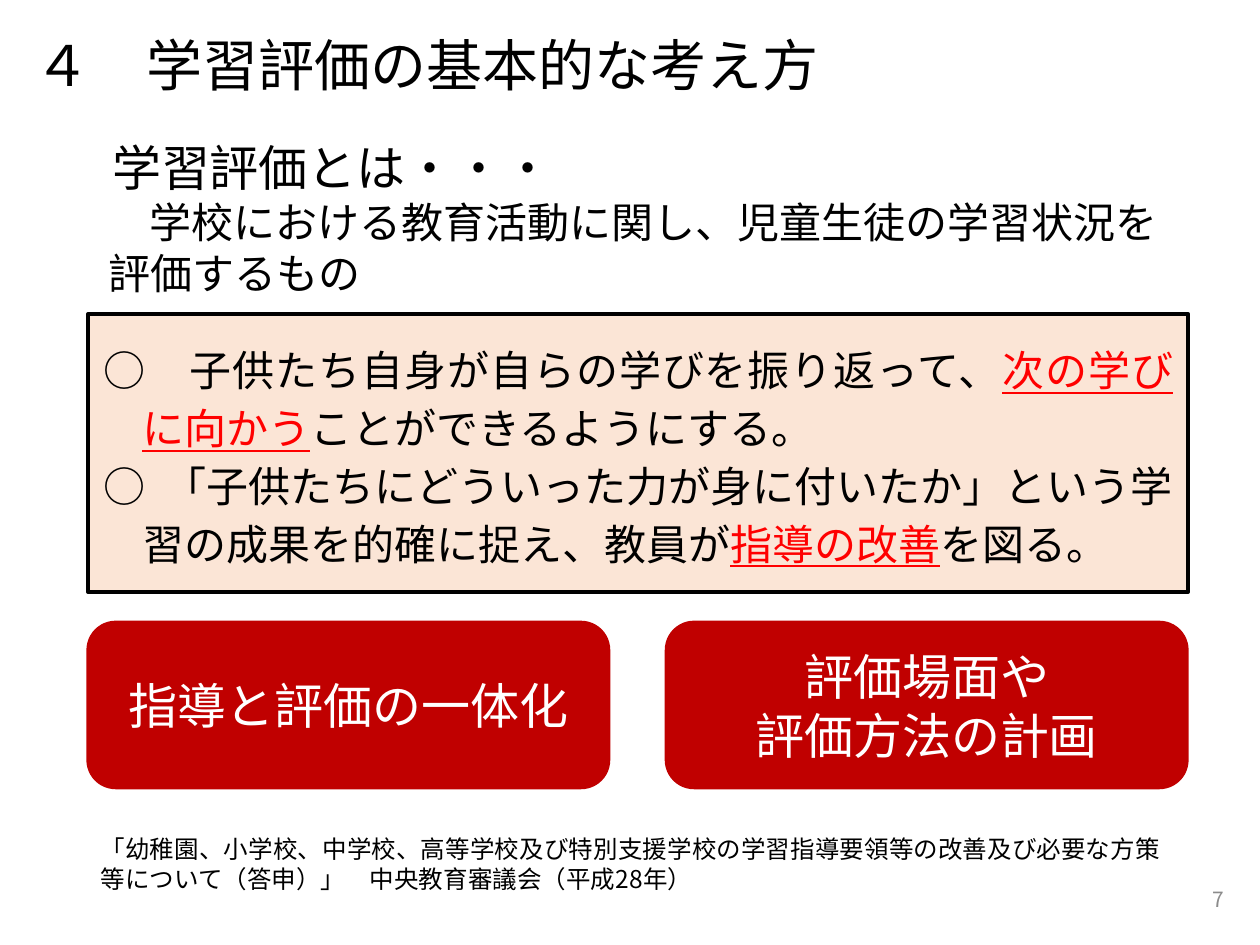
import pptx
import pptx.dml.color
import pptx.enum.shapes
import pptx.enum.text
import pptx.oxml.ns
import pptx.util
from pptx.util import Inches

ALIGN = pptx.enum.text.PP_ALIGN
ANCHOR = pptx.enum.text.MSO_ANCHOR
SHAPE = pptx.enum.shapes.MSO_SHAPE
Pt = pptx.util.Pt

THEME = {
    "font": "Noto Sans CJK JP",
    "black": "000000", "white": "FFFFFF", "red": "FF0000",
    "card": "C00000", "panel": "FBE5D6", "grey": "8C8C8C",
    "title": 32, "heading": 28, "text": 24, "source": 14, "number": 12,
}


def rgb(name):
    return pptx.dml.color.RGBColor.from_string(THEME[name])


def write(tf, text, size="text", color="black", align=ALIGN.JUSTIFY,
          leading=None, left=0, hang=0):
    """Add a paragraph; parts between asterisks are red and underlined."""
    p = tf.paragraphs[0]
    if p.runs:
        p = tf.add_paragraph()
    p.alignment = align
    p.space_before = Pt(0)
    if leading:
        p.line_spacing = Pt(leading)
    pPr = p._p.get_or_add_pPr()
    pPr.set("marL", str(Inches(left)))
    pPr.set("indent", str(-Inches(hang)))
    pPr.append(pPr.makeelement(pptx.oxml.ns.qn("a:buNone"), {}))
    for i, part in enumerate(text.split("*")):
        if not part:
            continue
        key = i % 2 == 1
        r = p.add_run()
        r.text = part
        r.font.size = Pt(THEME[size])
        r.font.name = THEME["font"]
        r.font.color.rgb = rgb("red" if key else color)
        r.font.underline = key
        rPr = r._r.get_or_add_rPr()
        ea = rPr.makeelement(pptx.oxml.ns.qn("a:ea"), {"typeface": THEME["font"]})
        rPr.find(pptx.oxml.ns.qn("a:latin")).addnext(ea)


prs = pptx.Presentation()
prs.slide_width, prs.slide_height = Inches(10), Inches(7.5)
s = prs.slides.add_slide(prs.slide_layouts[1])
for sp in list(s.placeholders)[2:]:
    sp.element.getparent().remove(sp.element)

# Title
title = s.shapes.title
title.left, title.top = Inches(0.2), Inches(0.2)
title.width, title.height = Inches(9.62), Inches(0.61)
tf = title.text_frame
tf.auto_size = pptx.enum.text.MSO_AUTO_SIZE.NONE
tf.vertical_anchor = ANCHOR.MIDDLE
tf.margin_left = tf.margin_right = Inches(0.07)
tf.margin_top = tf.margin_bottom = Inches(0.03)
write(tf, "４　学習評価の基本的な考え方", "title", align=ALIGN.LEFT)

# Definition
body = s.placeholders[1]
body.left, body.top = Inches(0.35), Inches(0.95)
body.width, body.height = Inches(9.65), Inches(5.91)
tf = body.text_frame
tf.auto_size = pptx.enum.text.MSO_AUTO_SIZE.NONE
write(tf, "学習評価とは・・・", "heading", leading=40, left=0.44)
write(tf, "学校における教育活動に関し、児童生徒の学習状況を", leading=29, left=0.74)
write(tf, "評価するもの", leading=29, left=0.41)

# Panel with the two aims
panel = s.shapes.add_shape(SHAPE.RECTANGLE, Inches(0.7), Inches(2.49),
                           Inches(8.73), Inches(2.21))
panel.shadow.inherit = False
panel.fill.solid()
panel.fill.fore_color.rgb = rgb("panel")
panel.line.color.rgb = rgb("black")
panel.line.width = Pt(2)
tf = panel.text_frame
tf.word_wrap = True
tf.vertical_anchor = ANCHOR.MIDDLE
tf.margin_left = tf.margin_right = tf.margin_top = tf.margin_bottom = Inches(0.12)
for aim in (
    "○　子供たち自身が自らの学びを振り返って、*次の学びに向かう*ことができるようにする。",
    "○  「子供たちにどういった力が身に付いたか」という学習の成果を的確に捉え、"
    "教員が*指導の改善*を図る。",
):
    write(tf, aim, leading=33, left=0.31, hang=0.31)

# Red cards
cards = [["指導と評価の一体化"], ["評価場面や", "評価方法の計画"]]
for i, lines in enumerate(cards):
    card = s.shapes.add_shape(SHAPE.ROUNDED_RECTANGLE, Inches(0.7 + i * 4.59),
                              Inches(4.94), Inches(4.13), Inches(1.31))
    card.shadow.inherit = False
    card.fill.solid()
    card.fill.fore_color.rgb = rgb("card")
    card.line.color.rgb = rgb("card")
    card.line.width = Pt(2)
    tf = card.text_frame
    tf.word_wrap = True
    tf.vertical_anchor = ANCHOR.MIDDLE
    for line in lines:
        write(tf, line, "heading", "white", ALIGN.CENTER, leading=34)

# Source and page number
footers = [
    ((0.7, 6.56, 8.61, 0.59),
     "「幼稚園、小学校、中学校、高等学校及び特別支援学校の学習指導要領等の改善及び"
     "必要な方策等について（答申）」　中央教育審議会（平成28年）",
     dict(size="source", leading=17)),
    ((7.56, 6.94, 2.25, 0.4), "7",
     dict(size="number", color="grey", align=ALIGN.RIGHT)),
]
for place, text, style in footers:
    tf = s.shapes.add_textbox(*map(Inches, place)).text_frame
    tf.word_wrap = True
    tf.vertical_anchor = ANCHOR.MIDDLE
    write(tf, text, **style)

prs.save("out.pptx")
